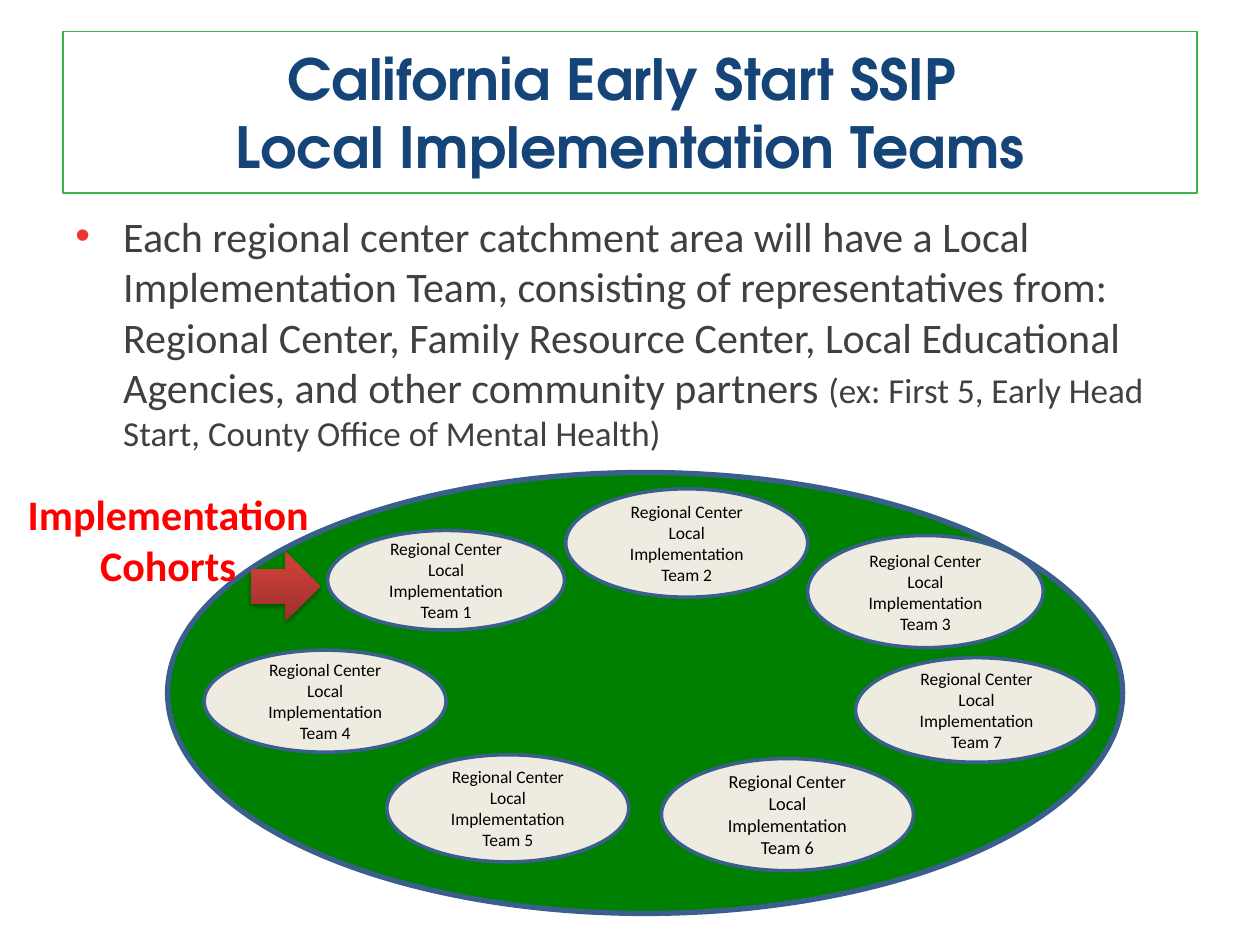
from lxml import etree
from pptx import Presentation
from pptx.dml.color import RGBColor
from pptx.enum import shapes, text
from pptx.oxml import parse_xml
from pptx.oxml.ns import nsdecls, qn
from pptx.util import Inches, Pt


def rgb(value):
    return RGBColor.from_string(value)


def add_run(p, words, color, **fmt):
    r = p.add_run()
    r.text = words
    r.font.color.rgb = rgb(color)
    for name, value in {"name": "Calibri", **fmt}.items():
        setattr(r.font, name, value)


prs = Presentation()
prs.slide_width, prs.slide_height = Inches(10), Inches(7.5)
s = prs.slides.add_slide(prs.slide_layouts[5])

# Title
sp = s.shapes.title
for name, value in {"left": 0.5, "top": 0.25, "width": 9, "height": 1.28}.items():
    setattr(sp, name, Inches(value))
sp.line.color.rgb = rgb("39B54A")
sp.line.width = Pt(1)
tf = sp.text_frame
tf.auto_size = text.MSO_AUTO_SIZE.NONE
tf.vertical_anchor = text.MSO_ANCHOR.MIDDLE
p = tf.paragraphs[0]
p.alignment = text.PP_ALIGN.CENTER
title_format = {"name": "TeX Gyre Adventor", "size": Pt(32.4), "bold": True}
add_run(p, "California Early Start SSIP ", "154578", **title_format)
p.add_line_break()
add_run(p, "Local Implementation Teams", "154578", **title_format)

# Bulleted description
sp = s.shapes.add_textbox(Inches(0.5), Inches(1.62), Inches(9), Inches(2.13))
tf = sp.text_frame
tf.word_wrap = True
p = tf.paragraphs[0]
pPr = p._p.get_or_add_pPr()
pPr.set("marL", str(Inches(0.38)))
pPr.set("indent", str(Inches(-0.38)))
color = etree.SubElement(pPr, qn("a:buClr"))
etree.SubElement(color, qn("a:srgbClr"), val="ED3532")
etree.SubElement(pPr, qn("a:buFont"), typeface="Arial")
etree.SubElement(pPr, qn("a:buChar"), char="•")
add_run(p, "Each regional center catchment area will have a Local Implementation Team, "
        "consisting of representatives from: Regional Center, Family Resource Center, "
        "Local Educational Agencies, and other community partners ", "404040", size=Pt(24))
add_run(p, "(ex: First 5, Early Head Start, County Office of Mental Health)",
        "404040", size=Pt(20))

# Large oval, then the team ovals: team, left, top, width, height, text size
ovals = [
    (None, 1.33, 3.75, 7.58, 3.5, None),
    (3, 6.41, 4.25, 1.87, 0.89, 10),
    (1, 2.6, 4.21, 1.88, 0.79, 10),
    (2, 4.49, 3.88, 1.92, 0.86, 10),
    (4, 1.62, 5.16, 1.92, 0.81, 10),
    (6, 5.25, 6.02, 2, 0.89, 10.5),
    (5, 3.07, 5.99, 1.92, 0.85, 10),
    (7, 6.79, 5.22, 1.92, 0.83, 10),
]
for team, *box, size in ovals:
    sp = s.shapes.add_shape(shapes.MSO_SHAPE.OVAL, *map(Inches, box))
    sp.shadow.inherit = False
    sp.fill.solid()
    sp.fill.fore_color.rgb = rgb("EEECE1" if team else "008000")
    sp.line.color.rgb = rgb("3A5F8C")
    sp.line.width = Pt(2 if team else 3)
    if team:
        tf = sp.text_frame
        tf.word_wrap = True
        tf.vertical_anchor = text.MSO_ANCHOR.MIDDLE
        for p, words in ((tf.paragraphs[0], "Regional Center"),
                         (tf.add_paragraph(), f"Local Implementation Team {team}")):
            p.alignment = text.PP_ALIGN.CENTER
            add_run(p, words, "000000", size=Pt(size))

# Red arrow with a gradient and a soft shadow
sp = s.shapes.add_shape(shapes.MSO_SHAPE.RIGHT_ARROW,
                        Inches(1.99), Inches(4.38), Inches(0.55), Inches(0.55))
sp.line.fill.background()
sp.fill.gradient()
sp.fill.gradient_angle = 90
for stop, value, position in zip(sp.fill.gradient_stops, ("9C2F2D", "CB3E3A"), (0, 0.8)):
    stop.color.rgb = rgb(value)
    stop.position = position
sp._element.spPr.append(parse_xml(
    f'<a:effectLst {nsdecls("a")}>'
    f'<a:outerShdw blurRad="{Pt(3.1)}" dist="{Pt(1.8)}" dir="5400000" rotWithShape="0">'
    '<a:srgbClr val="000000"><a:alpha val="35000"/></a:srgbClr>'
    '</a:outerShdw></a:effectLst>'))

# Cohorts label
sp = s.shapes.add_textbox(Inches(0), Inches(3.83), Inches(2.67), Inches(0.91))
tf = sp.text_frame
tf.word_wrap = True
tf.auto_size = text.MSO_AUTO_SIZE.SHAPE_TO_FIT_TEXT
p = tf.paragraphs[0]
p.alignment = text.PP_ALIGN.CENTER
add_run(p, "Implementation Cohorts", "FF0000", size=Pt(24), bold=True)

prs.save("out.pptx")
